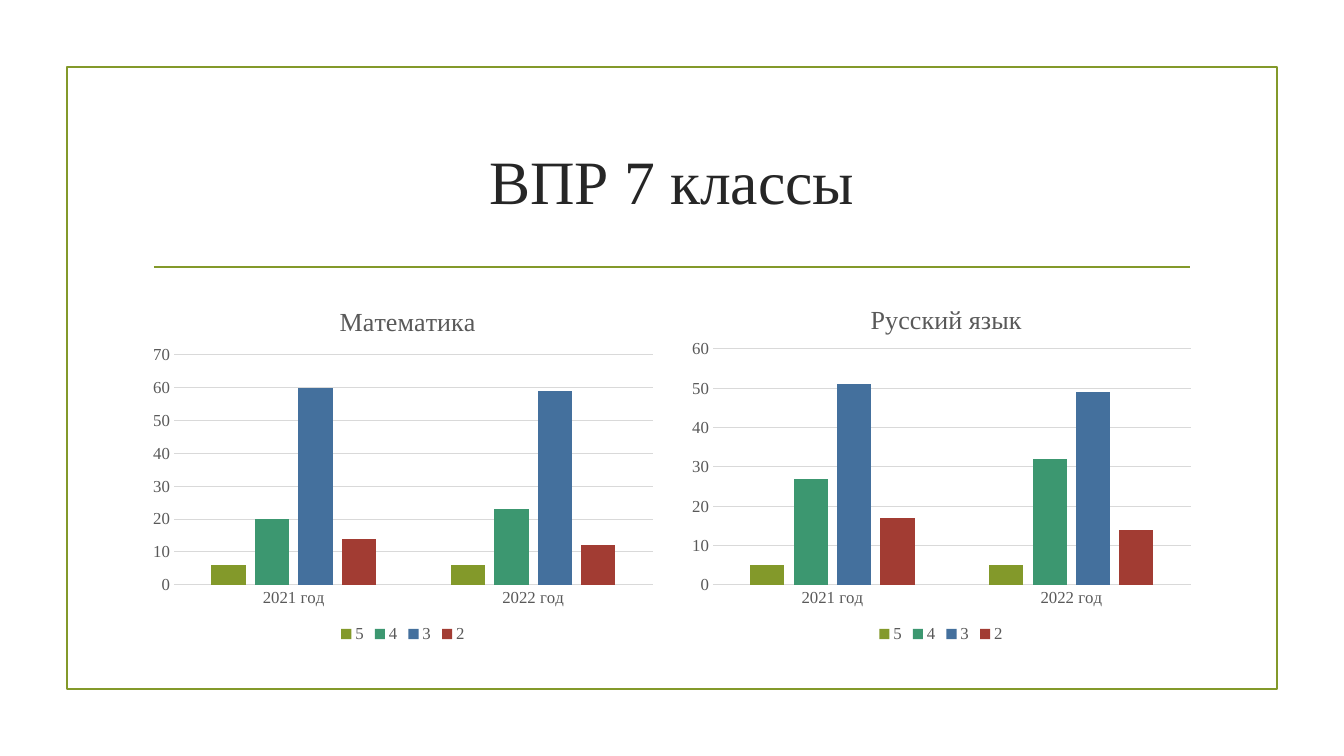
from lxml.etree import SubElement
from pptx import Presentation
from pptx.chart.data import CategoryChartData
from pptx.dml.color import RGBColor
from pptx.enum.chart import XL_CHART_TYPE, XL_LEGEND_POSITION, XL_TICK_MARK
from pptx.enum.shapes import MSO_CONNECTOR, MSO_SHAPE
from pptx.enum.text import MSO_ANCHOR, PP_ALIGN
from pptx.oxml import parse_xml
from pptx.oxml.ns import nsdecls, qn
from pptx.util import Emu, Pt

FONT = "Times New Roman"
OLIVE = RGBColor(0x83, 0x99, 0x2A)
GREEN = RGBColor(0x3C, 0x97, 0x70)
BLUE = RGBColor(0x44, 0x70, 0x9D)
RED = RGBColor(0xA2, 0x3C, 0x33)
INK = RGBColor(0x26, 0x26, 0x26)
GRAY = RGBColor(0x59, 0x59, 0x59)
GRID = RGBColor(0xD9, 0xD9, 0xD9)

YEARS = ["2021 год", "2022 год"]
GRADES = {"5": OLIVE, "4": GREEN, "3": BLUE, "2": RED}
CHART_WIDTH, CHART_HEIGHT = 520, 365

# Title and plot positions are px measured inside the chart's box
SUBJECTS = [
    dict(title="Математика", values=[(6, 6), (20, 23), (60, 59), (14, 12)],
         maximum=70, title_at=(192, 19), plot_box=(31, 73, 479, 230)),
    dict(title="Русский язык", values=[(5, 5), (27, 32), (51, 49), (17, 14)],
         maximum=60, title_at=(185, 17), plot_box=(32, 67, 478, 236)),
]


def px(length):
    return Emu(round(length * 914400 / 100.8))


def style_font(font, size, color):
    font.name = FONT
    font.size = Pt(size)
    font.color.rgb = color


def style_line(line, color, width):
    line.color.rgb = color
    line.width = Pt(width)


def add_frame(slide, left, top, width, height):
    """Border of the slide and the rule under the title."""
    border = slide.shapes.add_shape(
        MSO_SHAPE.RECTANGLE, px(left), px(top), px(width), px(height))
    border.shadow.inherit = False
    border.fill.background()
    style_line(border.line, OLIVE, 1.25)

    rule = slide.shapes.add_connector(
        MSO_CONNECTOR.STRAIGHT, px(left + 87), px(top + 200),
        px(left + width - 87), px(top + 200))
    style_line(rule.line, OLIVE, 1.25)
    SubElement(rule._element.spPr, qn("a:effectLst"))


def add_title(slide, text, left, top, width, height):
    box = slide.shapes.add_textbox(px(left), px(top), px(width), px(height))
    text_frame = box.text_frame
    text_frame.word_wrap = True
    text_frame.vertical_anchor = MSO_ANCHOR.MIDDLE
    text_frame.text = text
    paragraph = text_frame.paragraphs[0]
    paragraph.alignment = PP_ALIGN.CENTER
    style_font(paragraph.runs[0].font, 44, INK)


def set_layout(element, position, target, lengths):
    """Fix a chart part at a share of the chart's width and height."""
    for layout in element.findall(qn("c:layout")):
        element.remove(layout)
    layout = parse_xml(f"<c:layout {nsdecls('c')}/>")
    element.insert(position, layout)
    manual = SubElement(layout, qn("c:manualLayout"))
    if target:
        SubElement(manual, qn("c:layoutTarget")).set("val", target)
    for name in ("xMode", "yMode"):
        SubElement(manual, qn(f"c:{name}")).set("val", "edge")
    sides = (CHART_WIDTH, CHART_HEIGHT) * 2
    for name, length, side in zip("xywh", lengths, sides):
        SubElement(manual, qn(f"c:{name}")).set("val", f"{length / side:.4f}")


def add_grade_chart(slide, left, top, title, values, maximum, title_at, plot_box):
    data = CategoryChartData()
    data.categories = YEARS
    for grade, shares in zip(GRADES, values):
        data.add_series(grade, shares)
    chart = slide.shapes.add_chart(
        XL_CHART_TYPE.COLUMN_CLUSTERED, px(left), px(top),
        px(CHART_WIDTH), px(CHART_HEIGHT), data).chart
    style_font(chart.font, 12, GRAY)

    # Title
    chart.has_title = True
    text_frame = chart.chart_title.text_frame
    text_frame.text = title
    run_font = text_frame.paragraphs[0].runs[0].font
    style_font(run_font, 18.6, GRAY)
    run_font.bold = False
    chart.chart_title.include_in_layout = False
    set_layout(chart.chart_title._element, 1, None, title_at)

    # Columns
    plot = chart.plots[0]
    plot.gap_width = 219
    plot.overlap = -27
    plot.vary_by_categories = False
    for series, color in zip(plot.series, GRADES.values()):
        series.format.fill.solid()
        series.format.fill.fore_color.rgb = color
    set_layout(plot._element.getparent(), 0, "inner", plot_box)

    # Axes
    for axis in (chart.category_axis, chart.value_axis):
        axis.major_tick_mark = XL_TICK_MARK.NONE
        axis.minor_tick_mark = XL_TICK_MARK.NONE
        style_font(axis.tick_labels.font, 12, GRAY)
    style_line(chart.category_axis.format.line, GRID, 0.75)
    value_axis = chart.value_axis
    value_axis.format.line.fill.background()
    value_axis.minimum_scale = 0
    value_axis.maximum_scale = maximum
    value_axis.major_unit = 10
    style_line(value_axis.major_gridlines.format.line, GRID, 0.75)

    # Legend
    chart.has_legend = True
    chart.legend.position = XL_LEGEND_POSITION.BOTTOM
    chart.legend.include_in_layout = False
    style_font(chart.legend.font, 12, GRAY)


def main():
    presentation = Presentation()
    presentation.slide_width = px(1344)
    presentation.slide_height = px(756)
    slide = presentation.slides.add_slide(presentation.slide_layouts[6])

    add_frame(slide, 67, 67, 1210, 622)
    add_title(slide, "ВПР 7 классы", 143, 108, 1058, 144)
    for index, subject in enumerate(SUBJECTS):
        add_grade_chart(slide, 143 + index * 538, 282, **subject)

    presentation.save("out.pptx")


if __name__ == "__main__":
    main()
